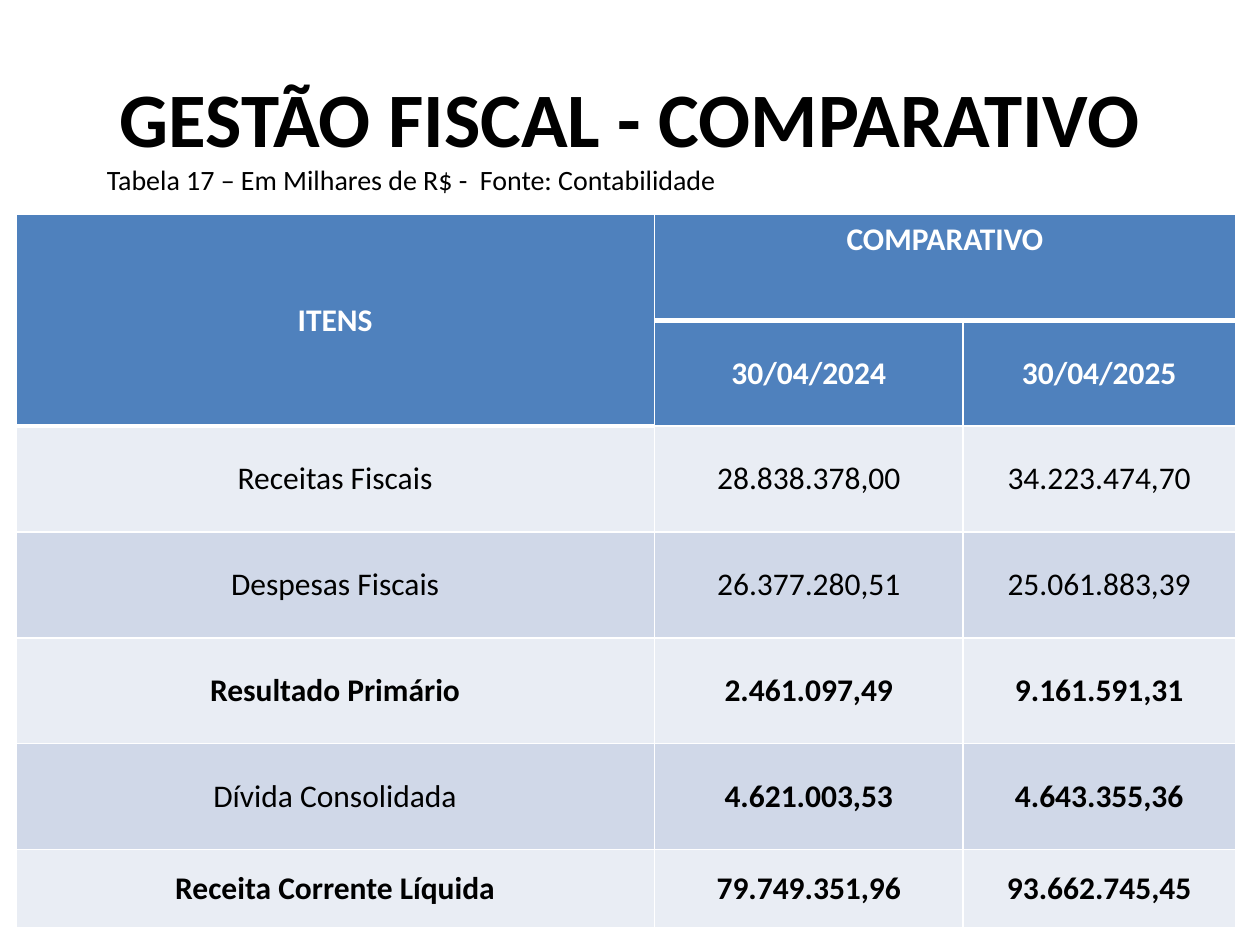
from lxml import etree
from pptx import Presentation
from pptx.dml.color import RGBColor
from pptx.enum.text import MSO_ANCHOR, PP_ALIGN
from pptx.oxml.ns import qn
from pptx.util import Pt

LEFT, CENTER = PP_ALIGN.LEFT, PP_ALIGN.CENTER
TOP, MIDDLE = MSO_ANCHOR.TOP, MSO_ANCHOR.MIDDLE
FONT = "Calibri"
COLORS = {"ink": "000000", "white": "FFFFFF", "head": "4F81BD",
          "light": "E9EDF4", "dark": "D0D8E8"}
COLS = [365, 176.4, 155.5]
ROWS = [60.5] * 6 + [44.6]
HEADS = [("ITENS", "COMPARATIVO", ""), ("", "30/04/2024", "30/04/2025")]
ITEMS = [
    ("Receitas Fiscais", "28.838.378,00", "34.223.474,70"),
    ("Despesas Fiscais", "26.377.280,51", "25.061.883,39"),
    ("Resultado Primário", "2.461.097,49", "9.161.591,31"),
    ("Dívida Consolidada", "4.621.003,53", "4.643.355,36"),
    ("Receita Corrente Líquida", "79.749.351,96", "93.662.745,45"),
]
BOLD = {(4, 0), (4, 1), (4, 2), (5, 1), (5, 2), (6, 0), (6, 1), (6, 2)}
THICK = {(0, 1, "B"), (0, 2, "B"), (1, 1, "T"), (1, 2, "T"),
         (0, 0, "B"), (1, 0, "B"), (2, 0, "T")}


def write(frame, text, size, color, bold, align, anchor):
    """Put one styled run into a text frame."""
    frame.word_wrap = True
    frame.vertical_anchor = anchor
    para = frame.paragraphs[0]
    para.alignment = align
    run = para.add_run()
    run.text = text
    font = run.font
    font.name, font.size, font.bold = FONT, Pt(size), bold
    font.color.rgb = RGBColor.from_string(COLORS[color])


def add_text(slide, box, text, size, bold, align, anchor):
    """Place a text box within the given box."""
    shape = slide.shapes.add_textbox(*map(Pt, box))
    write(shape.text_frame, text, size, "ink", bold, align, anchor)


def add_edges(cell, row, col):
    """Draw the white borders of a cell."""
    props = cell._tc.get_or_add_tcPr()
    for side in "LRTB":
        width = 3 if (row, col, side) in THICK else 1
        line = etree.SubElement(props, qn(f"a:ln{side}"), w=str(Pt(width)))
        fill = etree.SubElement(line, qn("a:solidFill"))
        etree.SubElement(fill, qn("a:srgbClr"), val=COLORS["white"])


def add_grid(slide, left, top):
    """Build the comparison table at the given corner."""
    data = HEADS + ITEMS
    table = slide.shapes.add_table(
        len(ROWS), len(COLS), Pt(left), Pt(top), Pt(sum(COLS)), Pt(sum(ROWS))).table
    for part, size in zip(table.columns, COLS):
        part.width = Pt(size)
    for part, size in zip(table.rows, ROWS):
        part.height = Pt(size)
    table.cell(0, 0).merge(table.cell(1, 0))
    table.cell(0, 1).merge(table.cell(0, 2))
    for row, texts in enumerate(data):
        head = row < len(HEADS)
        tone = "head" if head else ("light", "dark")[row % 2]
        for col, text in enumerate(texts):
            cell = table.cell(row, col)
            add_edges(cell, row, col)
            cell.fill.solid()
            cell.fill.fore_color.rgb = RGBColor.from_string(COLORS[tone])
            if text:
                anchor = TOP if (row, col) == (0, 1) else MIDDLE
                cell.vertical_anchor = anchor
                write(cell.text_frame, text, 18, "white" if head else "ink",
                      head or (row, col) in BOLD, CENTER, anchor)
                cell.text_frame.word_wrap = None
                cell.text_frame.vertical_anchor = None


def main():
    """Build and save the slide."""
    deck = Presentation()
    deck.slide_width, deck.slide_height = Pt(720), Pt(540)
    slide = deck.slides.add_slide(deck.slide_layouts[6])
    add_text(slide, (36, 21.6, 648, 90), "GESTÃO FISCAL - COMPARATIVO",
             44, True, CENTER, MIDDLE)
    add_text(slide, (54, 89.5, 648, 45),
             "Tabela 17 – Em Milhares de R$ -  Fonte: Contabilidade",
             16, False, LEFT, TOP)
    add_grid(slide, 9, 122.5)
    deck.save("out.pptx")


if __name__ == "__main__":
    main()
